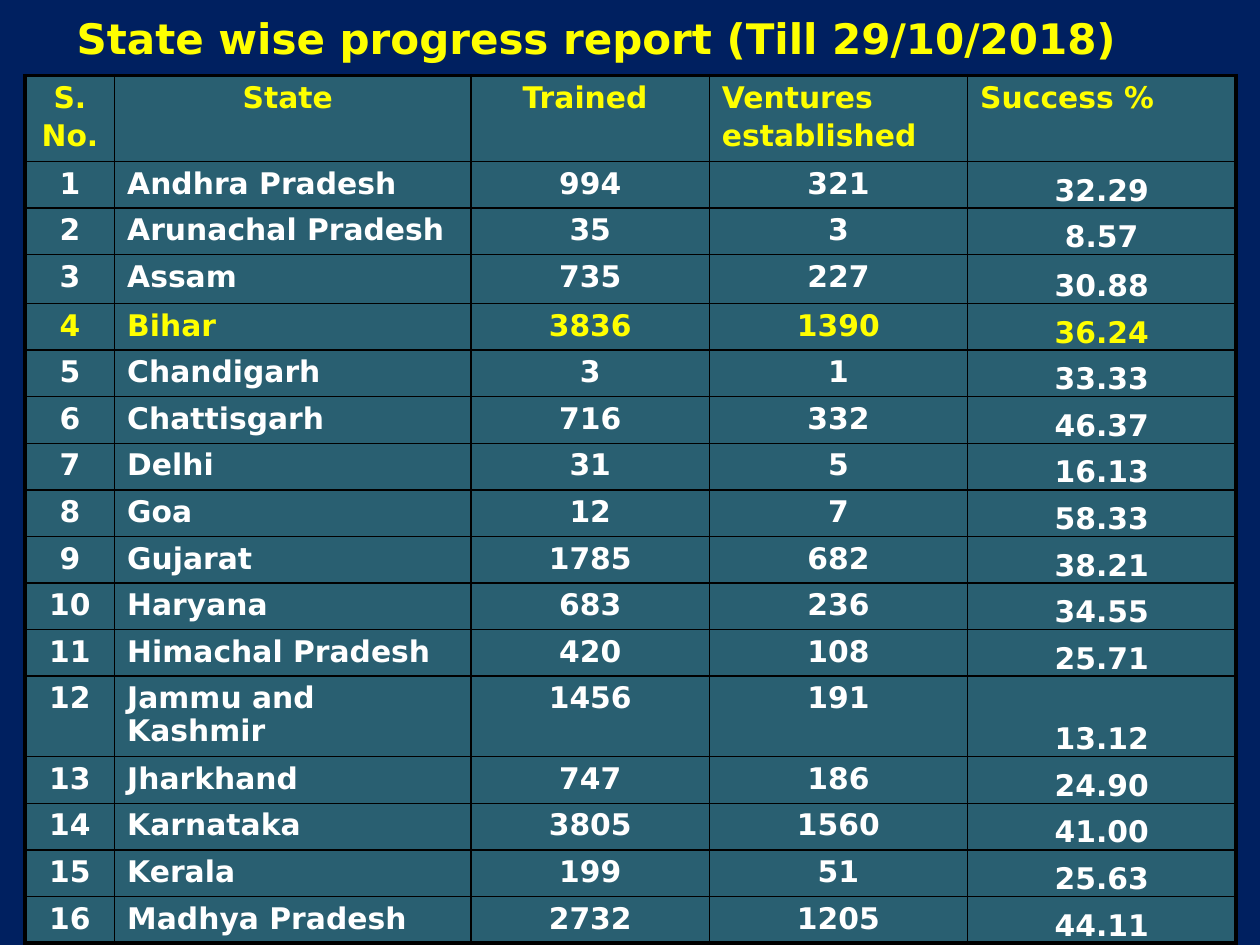
import dataclasses

import pptx
import pptx.dml.color
import pptx.enum.text
import pptx.oxml
import pptx.oxml.ns
import pptx.util

Inch = pptx.util.Inches
Point = pptx.util.Pt
Align = pptx.enum.text.PP_ALIGN
Anchor = pptx.enum.text.MSO_ANCHOR


@dataclasses.dataclass(frozen=True)
class Theme:
    face: str = "DejaVu Sans"
    back: str = "002060"
    cell: str = "295F71"
    line: str = "000000"
    text: str = "FFFFFF"
    accent: str = "FFFF00"
    title: int = 24
    body: int = 17
    thin: float = 1
    thick: float = 2.25


THEME = Theme()
WIDE, HIGH = 10, 7.5
TITLE = "State wise progress report (Till 29/10/2018)"
HEAD = ["S.\nNo.", "State ", "Trained ", "Ventures\nestablished", "Success %"]
STATES = [
    ("Andhra Pradesh", 994, 321, "32.29"),
    ("Arunachal Pradesh", 35, 3, "8.57"),
    ("Assam", 735, 227, "30.88"),
    ("Bihar", 3836, 1390, "36.24"),
    ("Chandigarh", 3, 1, "33.33"),
    ("Chattisgarh", 716, 332, "46.37"),
    ("Delhi", 31, 5, "16.13"),
    ("Goa", 12, 7, "58.33"),
    ("Gujarat", 1785, 682, "38.21"),
    ("Haryana", 683, 236, "34.55"),
    ("Himachal Pradesh", 420, 108, "25.71"),
    ("Jammu and Kashmir", 1456, 191, "13.12"),
    ("Jharkhand", 747, 186, "24.90"),
    ("Karnataka", 3805, 1560, "41.00"),
    ("Kerala", 199, 51, "25.63"),
    ("Madhya Pradesh", 2732, 1205, "44.11"),
]
FOCUS = "Bihar"

# Grid shares: the header, Assam and the two-line state stand taller
COLS = [71, 283, 189, 205, 213]
TALL = {0: 68, 3: 39, 12: 64}
ROWS = [TALL.get(row, 37) for row in range(len(STATES) + 1)]


def tint(code):
    return pptx.dml.color.RGBColor.from_string(code)


def style(para, size, color):
    font = para.font
    font.name, font.size, font.bold = THEME.face, Point(size), True
    font.color.rgb = tint(color)


def border(cell, row, col):
    """Draw thick lines on the table's outer edge and thin ones inside."""
    outer = {
        "L": col == 0,
        "R": col == len(COLS) - 1,
        "T": row == 0,
        "B": row == len(ROWS) - 1,
    }
    props = cell._tc.get_or_add_tcPr()
    for side, edge in outer.items():
        width = Point(THEME.thick if edge else THEME.thin)
        props.append(pptx.oxml.parse_xml(
            f'<a:ln{side} {pptx.oxml.ns.nsdecls("a")} w="{width}">'
            f'<a:solidFill><a:srgbClr val="{THEME.line}"/></a:solidFill>'
            f'</a:ln{side}>'))


def fill_cell(cell, text, row, col):
    border(cell, row, col)
    cell.fill.solid()
    cell.fill.fore_color.rgb = tint(THEME.cell)

    # Percentages sit at the bottom with almost no margin
    rate = row > 0 and col == 4
    if rate:
        cell.vertical_anchor = Anchor.BOTTOM
        cell.margin_left = cell.margin_right = cell.margin_top = Inch(0.01)
        cell.margin_bottom = 0

    left = col >= 3 if row == 0 else col == 1
    bright = row == 0 or STATES[row - 1][0] == FOCUS
    cell.text = text
    for para in cell.text_frame.paragraphs:
        para.alignment = Align.LEFT if left else Align.CENTER
        if not rate:
            para.line_spacing = 0.95
            para.space_before = Point(3)
        style(para, THEME.body, THEME.accent if bright else THEME.text)


def add_title(slide, box):
    frame = slide.shapes.add_textbox(*map(Inch, box)).text_frame
    frame.word_wrap = True
    para = frame.paragraphs[0]
    para.text = TITLE
    style(para, THEME.title, THEME.accent)


def add_grid(slide, box):
    wide, high = box[2:]
    table = slide.shapes.add_table(
        len(ROWS), len(COLS), *map(Inch, box)).table
    table.first_row = table.horz_banding = False
    for column, share in zip(table.columns, COLS):
        column.width = Inch(wide * share / sum(COLS))
    for line, share in zip(table.rows, ROWS):
        line.height = Inch(high * share / sum(ROWS))

    data = [HEAD] + [[num, *state] for num, state in enumerate(STATES, 1)]
    for row, values in enumerate(data):
        for col, value in enumerate(values):
            fill_cell(table.cell(row, col), str(value), row, col)


def main():
    deck = pptx.Presentation()
    deck.slide_width, deck.slide_height = Inch(WIDE), Inch(HIGH)
    slide = deck.slides.add_slide(deck.slide_layouts[6])
    slide.background.fill.solid()
    slide.background.fill.fore_color.rgb = tint(THEME.back)

    # Title above, table filling the rest
    add_title(slide, (0.51, 0.05, WIDE - 0.51, 0.51))
    add_grid(slide, (0.2, 0.6, 9.61, 6.88))
    deck.save("out.pptx")


if __name__ == "__main__":
    main()
